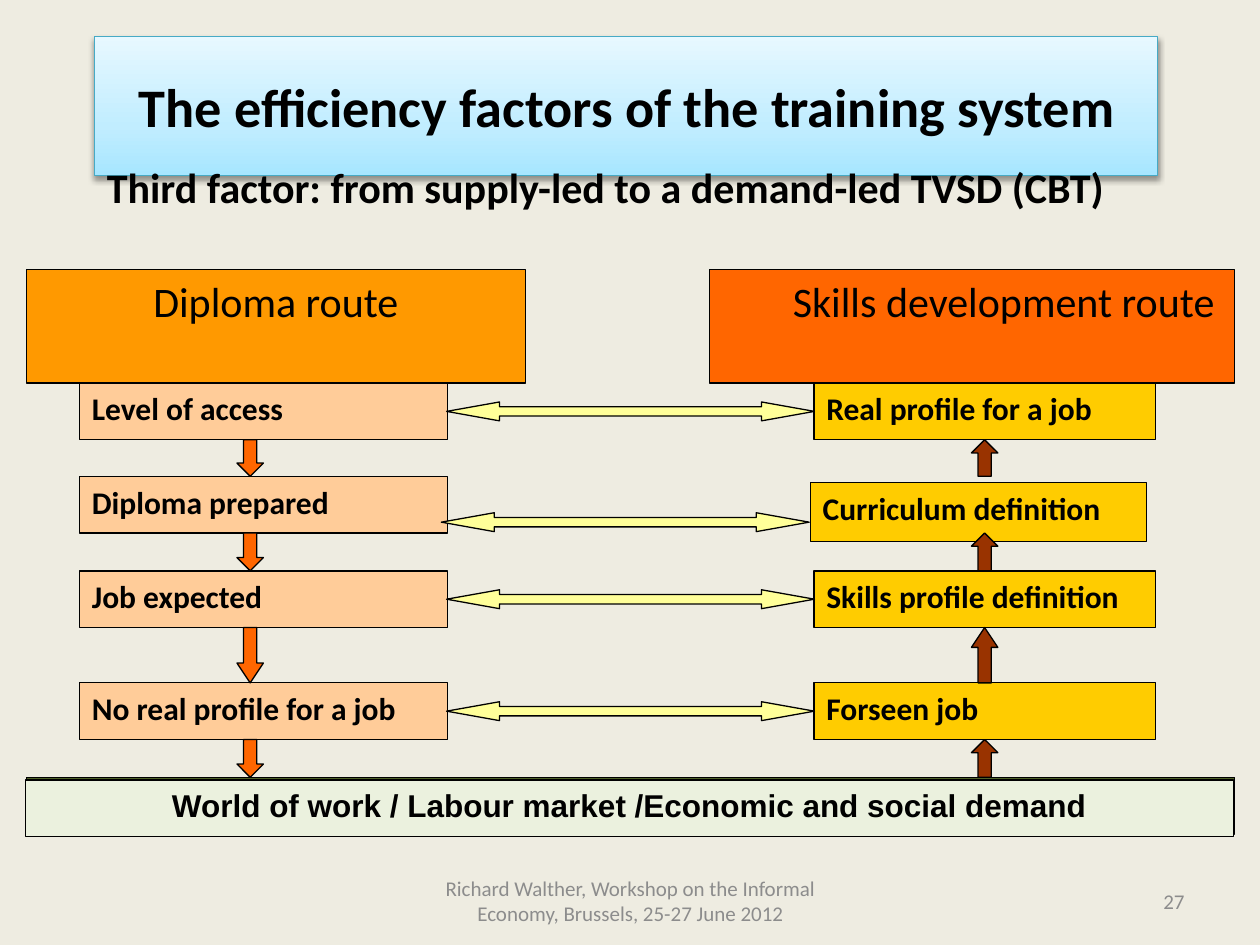
"""Build a slide comparing the diploma route with the skills development route."""
from dataclasses import dataclass

from lxml.etree import SubElement
from pptx import Presentation
from pptx.dml.color import RGBColor
from pptx.enum.shapes import MSO_SHAPE as Preset
from pptx.enum.text import MSO_ANCHOR as Anchor, PP_ALIGN as Align
from pptx.oxml.ns import qn
from pptx.util import Pt

BLACK = "000000"
ROW_TOPS = (218.9, 272.2, 326.2, 390.2)
ROW_HEIGHT = 32.4
WORLD_TOP = 444.2
LEFT_BOX, RIGHT_BOX = (45.4, 210.2), (465.1, 195.1)
TITLE_STOPS = ((0, "A7E6FF"), (35, "C1EDFF"), (100, "E7F8FF"))


@dataclass
class Area:
    left: float
    top: float
    width: float
    height: float

    def lengths(self) -> tuple:
        return tuple(Pt(value) for value in (self.left, self.top, self.width, self.height))


@dataclass
class Label:
    text: str
    size: float = 18
    bold: bool = True
    color: str = BLACK
    align: Align = Align.LEFT
    font: str = "Calibri"
    anchor: Anchor = Anchor.TOP
    indent: float = 0


@dataclass
class Route:
    box: tuple
    box_fill: str
    labels: tuple
    arrow_left: float
    arrow_fill: str
    arrow_preset: Preset
    header: Area
    header_fill: str
    header_label: Label


ROUTES = (
    Route(LEFT_BOX, "FFCC99",
          ("Level of access", "Diploma prepared", "Job expected", "No real profile for a job"),
          135.4, "FF6600", Preset.DOWN_ARROW, Area(15.1, 154.1, 285.1, 64.8), "FF9900",
          Label("Diploma route", 24, False, align=Align.CENTER)),
    Route(RIGHT_BOX, "FFCC00",
          ("Real profile for a job", "Curriculum definition", "Skills profile definition", "Forseen job"),
          555.1, "993300", Preset.UP_ARROW, Area(405.4, 154.1, 300.2, 64.8), "FF6600",
          Label("Skills development route", 24, False, align=Align.CENTER, indent=36)),
)


def rgb(color: str) -> RGBColor:
    return RGBColor.from_string(color)


def write(shape, label: Label) -> None:
    frame = shape.text_frame
    frame_format = {"word_wrap": True, "vertical_anchor": label.anchor,
                    "margin_left": Pt(7.2 + label.indent)}
    for name, value in frame_format.items():
        setattr(frame, name, value)
    paragraph = frame.paragraphs[0]
    paragraph.alignment = label.align
    run = paragraph.add_run()
    run.text = label.text
    for name, value in {"name": label.font, "size": Pt(label.size), "bold": label.bold}.items():
        setattr(run.font, name, value)
    run.font.color.rgb = rgb(label.color)


def draw(slide, area: Area, fill: str, label: Label | None = None,
         preset: Preset = Preset.RECTANGLE, adjustments: tuple = ()):
    shape = slide.shapes.add_shape(preset, *area.lengths())
    shape.shadow.inherit = False
    shape.fill.solid()
    shape.fill.fore_color.rgb = rgb(fill)
    shape.line.color.rgb = rgb(BLACK)
    shape.line.width = Pt(0.75)
    for index, value in enumerate(adjustments):
        shape.adjustments[index] = value
    if label:
        write(shape, label)
    return shape


def add_text(slide, area: Area, label: Label) -> None:
    write(slide.shapes.add_textbox(*area.lengths()), label)


def add_color(parent, color: str):
    return SubElement(parent, qn("a:srgbClr"), val=color)


def draw_title(slide) -> None:
    label = Label("The efficiency factors of the training system", 31,
                  align=Align.CENTER, anchor=Anchor.MIDDLE)
    title = draw(slide, Area(54, 20.9, 607.7, 79.2), "C1EDFF", label)
    title.line.color.rgb = rgb("46AAC5")
    title.line.width = Pt(0.5)
    title.fill.gradient()
    title.fill.gradient_angle = 90
    properties = title._element.spPr
    stops = properties.find(".//" + qn("a:gsLst"))
    for stop in list(stops):
        stops.remove(stop)
    for position, color in TITLE_STOPS:
        add_color(SubElement(stops, qn("a:gs"), pos=str(position * 1000)), color)
    shadow = SubElement(properties.find(qn("a:effectLst")), qn("a:outerShdw"),
                        blurRad=str(Pt(3.5)), dist=str(Pt(2)), dir="5400000", rotWithShape="0")
    SubElement(add_color(shadow, BLACK), qn("a:alpha"), val="38000")


def draw_route(slide, route: Route) -> None:
    left, width = route.box
    for top, text in zip(ROW_TOPS, route.labels):
        area = Area(left, top, width, ROW_HEIGHT)
        if text == "Curriculum definition":
            area = Area(463, 275.8, 192.2, 33.8)
        draw(slide, area, route.box_fill, Label(text))
    for top, following in zip(ROW_TOPS, ROW_TOPS[1:] + (WORLD_TOP,)):
        start = top + ROW_HEIGHT
        height = following - start
        head = 0.75 if height > 30 else 0.5
        draw(slide, Area(route.arrow_left, start, 15.1, height), route.arrow_fill,
             preset=route.arrow_preset, adjustments=(0.5, head))
    draw(slide, route.header, route.header_fill, route.header_label)


def main() -> None:
    presentation = Presentation()
    presentation.slide_width, presentation.slide_height = Pt(720), Pt(540)
    slide = presentation.slides.add_slide(presentation.slide_layouts[6])
    slide.background.fill.solid()
    slide.background.fill.fore_color.rgb = rgb("EEECE1")

    draw_title(slide)
    for route in ROUTES:
        draw_route(slide, route)
    for left, top in ((255.2, 229.7), (252.2, 293), (255.2, 337), (255.2, 401)):
        draw(slide, Area(left, top, 210.2, 10.8), "FFFF99",
             preset=Preset.LEFT_RIGHT_ARROW, adjustments=(0.5, 2.8))

    draw(slide, Area(15.1, WORLD_TOP, 690.5, ROW_HEIGHT), "4F6228")
    draw(slide, Area(14.4, 445.7, 690.5, ROW_HEIGHT), "EBF1DE",
         Label("World of work / Labour market /Economic and social demand",
               align=Align.CENTER, font="Arial"))

    footer = {"size": 12, "bold": False, "color": "8C8C8C", "anchor": Anchor.MIDDLE}
    add_text(slide, Area(246.2, 500.4, 228.2, 28.8),
             Label("Richard Walther, Workshop on the Informal Economy, Brussels, 25-27 June 2012",
                   align=Align.CENTER, **footer))
    add_text(slide, Area(516.2, 500.4, 167.8, 28.8), Label("27", align=Align.RIGHT, **footer))
    add_text(slide, Area(54, 88.6, 623.5, 58.3),
             Label("Third factor: from supply-led to a demand-led TVSD (CBT)", 24))
    presentation.save("out.pptx")


if __name__ == "__main__":
    main()
